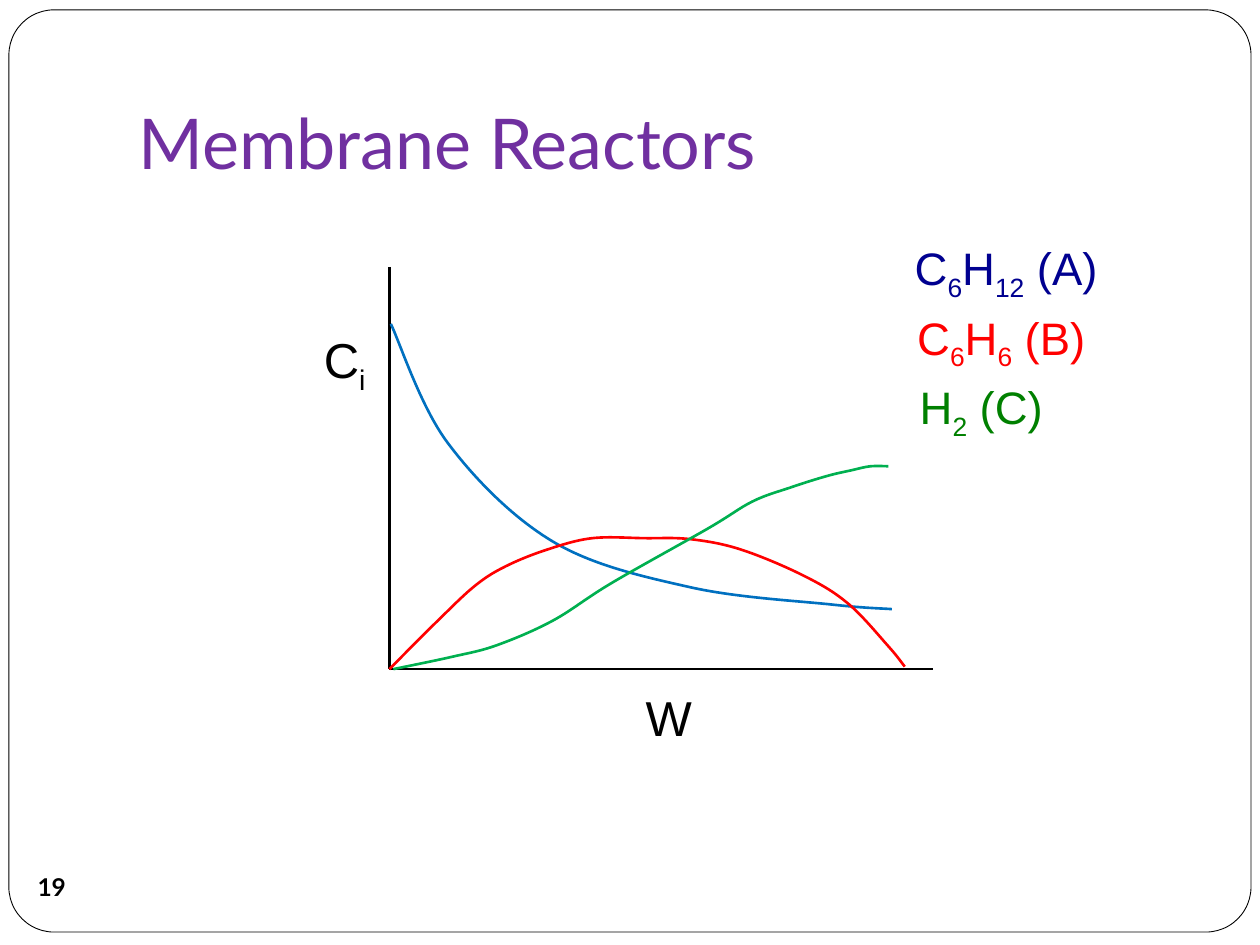
from itertools import pairwise

from lxml.etree import SubElement
from pptx import Presentation
from pptx.dml.color import RGBColor
from pptx.enum.shapes import MSO_CONNECTOR, MSO_SHAPE
from pptx.enum.text import MSO_ANCHOR, MSO_AUTO_SIZE, PP_ALIGN
from pptx.oxml.ns import qn
from pptx.util import Cm, Pt

BLACK = RGBColor(0x00, 0x00, 0x00)
WHITE = RGBColor(0xFF, 0xFF, 0xFF)
PURPLE = RGBColor(0x70, 0x30, 0xA0)
NAVY = RGBColor(0x00, 0x00, 0x90)
RED = RGBColor(0xFF, 0x00, 0x00)
GREEN = RGBColor(0x00, 0x80, 0x00)
CURVE_BLUE = RGBColor(0x00, 0x70, 0xC0)
CURVE_GREEN = RGBColor(0x00, 0xB0, 0x50)

CYCLOHEXANE = [(0.03, 6.96), (1.17, 4.57), (3.3, 2.57), (6.07, 1.65),
               (8.94, 1.3), (10.13, 1.21)]
BENZENE = [(0, 0), (1.04, 1.04), (1.75, 1.7), (2.36, 2.08), (3.18, 2.41),
           (4.09, 2.64), (5.16, 2.64), (6.07, 2.62), (7.09, 2.41),
           (8.36, 1.88), (9.25, 1.32), (10.06, 0.46), (10.39, 0.05)]
HYDROGEN = [(0.08, 0), (1.27, 0.25), (2.16, 0.48), (3.3, 0.98), (4.47, 1.73),
            (6.43, 2.84), (7.32, 3.38), (8.08, 3.66), (8.81, 3.89),
            (9.32, 4.01), (9.7, 4.09), (10.06, 4.09)]


def set_format(target, **values):
    """Set each named attribute on the target."""
    for name, value in values.items():
        setattr(target, name, value)


def write_text(paragraph, text, size, color, font="Arial", bold=False):
    """Write text in which every second part between underscores is a subscript."""
    for index, part in enumerate(text.split("_")):
        run = paragraph.add_run()
        run.text = part
        set_format(run.font, name=font, size=Pt(size), bold=bold)
        run.font.color.rgb = color
        if index % 2:
            run._r.get_or_add_rPr().set("baseline", "-25000")


def add_label(shapes, box, text, size, color, align=PP_ALIGN.LEFT):
    """Add a wrapped text label in the box."""
    label = shapes.add_textbox(*map(Cm, box)).text_frame
    label.word_wrap = True
    label.paragraphs[0].alignment = align
    write_text(label.paragraphs[0], text, size, color)


def add_frame(slide, box):
    """Draw the rounded border of the slide."""
    frame = slide.shapes.add_shape(MSO_SHAPE.ROUNDED_RECTANGLE, *map(Cm, box))
    frame.adjustments[0] = 0.049
    frame.shadow.inherit = False
    frame.fill.solid()
    frame.fill.fore_color.rgb = WHITE
    frame.line.color.rgb = BLACK
    frame.line.width = Pt(0.5)


def add_page_number(slide, box, number):
    """Place the page number in an unfilled circle."""
    badge = slide.shapes.add_shape(MSO_SHAPE.OVAL, *map(Cm, box))
    badge.shadow.inherit = False
    badge.fill.background()
    badge.line.fill.background()
    set_format(badge.text_frame, margin_left=0, margin_right=0, margin_top=0,
               margin_bottom=0, word_wrap=False,
               vertical_anchor=MSO_ANCHOR.MIDDLE)
    paragraph = badge.text_frame.paragraphs[0]
    paragraph.alignment = PP_ALIGN.CENTER
    write_text(paragraph, number, 14, BLACK, "Lato", True)


def add_title(slide, box, text):
    """Move the title placeholder to the box, in front of the frame."""
    title = slide.shapes.title
    slide.shapes.element.append(title.element)
    left, top, width, height = map(Cm, box)
    set_format(title, left=left, top=top, width=width, height=height)
    set_format(title.text_frame, vertical_anchor=MSO_ANCHOR.BOTTOM,
               margin_bottom=Cm(0.25), auto_size=MSO_AUTO_SIZE.NONE,
               word_wrap=True)
    paragraph = title.text_frame.paragraphs[0]
    paragraph.alignment = PP_ALIGN.LEFT
    write_text(paragraph, text, 40, PURPLE, "Lato")


def add_axis(shapes, start, end):
    """Draw one straight axis between two points."""
    axis = shapes.add_connector(MSO_CONNECTOR.STRAIGHT, *map(Cm, start + end))
    axis.line.color.rgb = BLACK
    axis.line.width = Pt(1.5)
    SubElement(axis.element.spPr, qn("a:effectLst"))


def smooth_path(curve):
    """Turn the straight segments of a freeform into a smooth spline."""
    path_element = next(curve.element.iter(qn("a:path")))
    points = [(int(p.get("x")), int(p.get("y")))
              for p in path_element.iter(qn("a:pt"))]
    padded = [points[0], *points, points[-1]]
    tangents = [tuple((b - a) / 6 for a, b in zip(before, after))
                for before, after in zip(padded, padded[2:])]
    segments = path_element.findall(qn("a:lnTo"))
    for segment, (start, end), (leave, arrive) in zip(
            segments, pairwise(points), pairwise(tangents)):
        bezier = SubElement(path_element, qn("a:cubicBezTo"))
        controls = [[p + t for p, t in zip(start, leave)],
                    [p - t for p, t in zip(end, arrive)], end]
        for x, y in controls:
            SubElement(bezier, qn("a:pt"), x=str(round(x)), y=str(round(y)))
        path_element.remove(segment)


def add_curve(shapes, origin, points, color):
    """Draw a smooth curve through points measured right and up from the origin."""
    left, bottom = origin
    first, *rest = [(Cm(left + x), Cm(bottom - y)) for x, y in points]
    builder = shapes.build_freeform(*first, scale=1.0)
    builder.add_line_segments(rest, close=False)
    curve = builder.convert_to_shape()
    curve.shadow.inherit = False
    curve.fill.background()
    curve.line.color.rgb = color
    curve.line.width = Pt(1.5)
    smooth_path(curve)


def add_concentration_plot(slide, box):
    """Draw the axes, the three concentration curves and the axis labels."""
    left, top, width, height = box
    origin = (left, top + height)
    shapes = slide.shapes.add_group_shape().shapes
    add_axis(shapes, (left, top), origin)
    add_axis(shapes, origin, (left + width, top + height))
    for points, color in [(CYCLOHEXANE, CURVE_BLUE), (BENZENE, RED),
                          (HYDROGEN, CURVE_GREEN)]:
        add_curve(shapes, origin, points, color)
    for x, y, text in [(-2.13, 1.14, "C_i"), (4.4, height + 0.25, "W")]:
        add_label(shapes, (left + x, top + y, 2.46, 1.45), text, 28, BLACK,
                  PP_ALIGN.CENTER)


def add_legend(slide, box):
    """List the three species, one below the other."""
    left, top, width, height = box
    pitch = height / 3
    species = [(0, "C_6_H_12_ (A)", NAVY), (0.05, "C_6_H_6_ (B)", RED),
               (0.1, "H_2_ (C)", GREEN)]
    for row, (indent, text, color) in enumerate(species):
        add_label(slide.shapes, (left + indent, top + row * pitch, width, 1.37),
                  text, 26, color)


def main():
    """Build the slide and save it."""
    deck = Presentation()
    set_format(deck, slide_width=Cm(25.4), slide_height=Cm(19.05))
    slide = deck.slides.add_slide(deck.slide_layouts[5])
    add_frame(slide, (0.18, 0.2, 25.04, 18.59))
    add_page_number(slide, (0.41, 17.25, 1.27, 1.27), "19")
    add_concentration_plot(slide, (7.85, 5.38, 10.95, 8.11))
    add_legend(slide, (18.19, 4.72, 4.75, 4.2))
    add_title(slide, (2.54, 0.76, 21.59, 3.18), "Membrane Reactors")
    deck.save("out.pptx")


if __name__ == "__main__":
    main()
